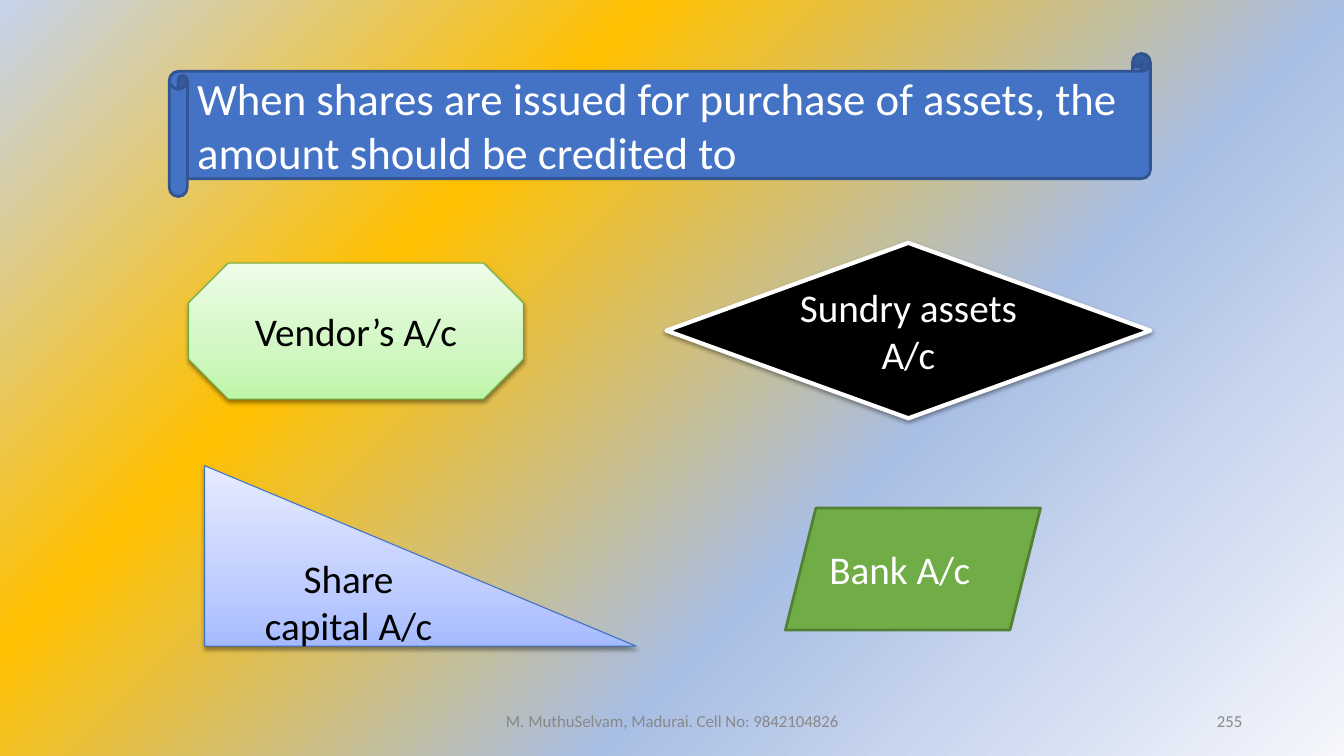
from lxml import etree
from pptx import Presentation
from pptx.dml.color import RGBColor
from pptx.enum.shapes import MSO_SHAPE
from pptx.enum.text import MSO_ANCHOR, PP_ALIGN
from pptx.oxml.ns import qn
from pptx.util import Inches, Pt

LEFT, CENTER, RIGHT = PP_ALIGN.LEFT, PP_ALIGN.CENTER, PP_ALIGN.RIGHT
MIDDLE = MSO_ANCHOR.MIDDLE

# Content: question, answer options and footer
QUESTION = dict(
    text="When shares are issued for purchase of assets, the amount should be credited to",
    kind=MSO_SHAPE.HORIZONTAL_SCROLL, box=(1.68, 0.53, 9.73, 1.42),
    style="question", align=LEFT)
OPTIONS = [
    dict(text="Vendor’s A/c", kind=MSO_SHAPE.OCTAGON,
         box=(1.87, 2.61, 3.32, 1.35), style="vendor", align=CENTER),
    dict(text="Sundry assets A/c", kind=MSO_SHAPE.DIAMOND,
         box=(6.61, 2.41, 4.8, 1.74), style="assets", align=CENTER),
    dict(text="Share capital A/c", kind=MSO_SHAPE.RIGHT_TRIANGLE,
         box=(2.03, 4.62, 4.28, 1.79), style="capital", align=CENTER),
    dict(text="Bank A/c", kind=MSO_SHAPE.PARALLELOGRAM,
         box=(7.79, 5.04, 2.53, 1.21), style="bank", align=LEFT),
]
FOOTER = [
    ("M. MuthuSelvam, Madurai. Cell No: 9842104826", (4.42, 6.95, 4.5, 0.4), CENTER),
    ("255", (9.42, 6.95, 3, 0.4), RIGHT),
]

# Theme: gradients are (position, colour) stops
THEME = {
    "font": "Calibri",
    "background": [(0, "F5F7FC"), (36, "A9BEE4"), (69, "FFC000"), (100, "C5D3ED")],
    "footer": dict(size=12, color="888888"),
    "question": dict(fill="4472C4", line="325491", width=2, size=32, color="FFFFFF"),
    "vendor": dict(fill=[(0, "BEF5A7"), (35, "D1F7C2"), (100, "EDFDE7")],
                   line="6DAC43", width=0.75, size=28, color="000000", shadow=True),
    "assets": dict(fill="000000", line="FFFFFF", width=3,
                   size=28, color="FFFFFF", shadow=True),
    "capital": dict(fill=[(0, "A6BBFF"), (35, "C0CEFF"), (100, "E7ECFF")],
                    line="3F6FC3", width=0.75, size=28, color="000000", shadow=True),
    "bank": dict(fill="70AD47", line="538035", width=2, size=28, color="FFFFFF"),
}


def add_xml(parent, tag, **attrs):
    return etree.SubElement(parent, qn(tag), {k: str(v) for k, v in attrs.items()})


def set_gradient(fill, owner, stops, radial=False):
    fill.gradient()
    grad = owner.find(".//" + qn("a:gradFill"))
    for child in list(grad):
        grad.remove(child)
    stop_list = add_xml(grad, "a:gsLst")
    for pos, color in stops:
        stop = add_xml(stop_list, "a:gs", pos=pos * 1000)
        add_xml(stop, "a:srgbClr", val=color)
    if radial:
        focus = add_xml(grad, "a:path", path="circle")
        add_xml(focus, "a:fillToRect", l=100000, t=100000)
        add_xml(grad, "a:tileRect", r=-100000, b=-100000)
    else:
        add_xml(grad, "a:lin", ang=270 * 60000, scaled=0)


def add_shadow(shape):
    effects = shape._element.spPr.find(qn("a:effectLst"))
    shadow = add_xml(effects, "a:outerShdw", blurRad=Pt(3.1), dist=Pt(1.6),
                     dir=90 * 60000, rotWithShape=0)
    color = add_xml(shadow, "a:srgbClr", val="000000")
    add_xml(color, "a:alpha", val=38000)


def write_text(shape, text, align, style):
    tf = shape.text_frame
    tf.word_wrap = True
    tf.vertical_anchor = MIDDLE
    p = tf.paragraphs[0]
    p.alignment = align
    r = p.add_run()
    r.text = text
    for name, value in dict(name=THEME["font"], size=Pt(style["size"])).items():
        setattr(r.font, name, value)
    r.font.color.rgb = RGBColor.from_string(style["color"])


def add_panel(s, text, kind, box, style, align):
    look = THEME[style]
    sp = s.shapes.add_shape(kind, *map(Inches, box))
    sp.shadow.inherit = False
    if isinstance(look["fill"], str):
        sp.fill.solid()
        sp.fill.fore_color.rgb = RGBColor.from_string(look["fill"])
    else:
        set_gradient(sp.fill, sp._element, look["fill"])
    sp.line.color.rgb = RGBColor.from_string(look["line"])
    sp.line.width = Pt(look["width"])
    if look.get("shadow"):
        add_shadow(sp)
    write_text(sp, text, align, look)


def main():
    prs = Presentation()
    prs.slide_width, prs.slide_height = Inches(13.33), Inches(7.5)
    s = prs.slides.add_slide(prs.slide_layouts[6])
    set_gradient(s.background.fill, s._element, THEME["background"], radial=True)

    # Question banner and answer shapes
    for panel in [QUESTION, *OPTIONS]:
        add_panel(s, **panel)

    # Footer and slide number
    for text, box, align in FOOTER:
        write_text(s.shapes.add_textbox(*map(Inches, box)), text, align, THEME["footer"])

    prs.save("out.pptx")


if __name__ == "__main__":
    main()
